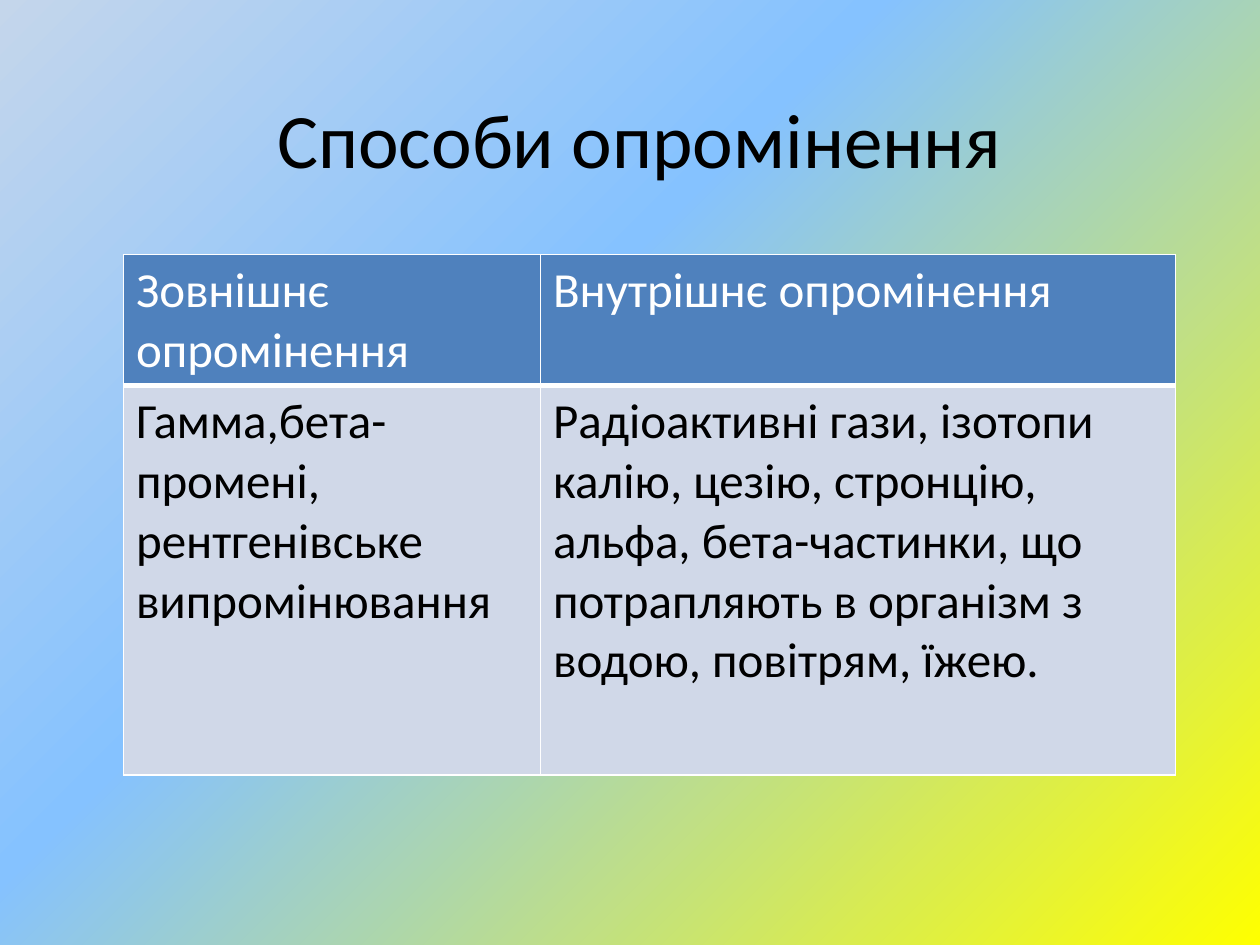
from copy import deepcopy

from lxml import etree
from pptx import Presentation
from pptx.dml.color import RGBColor
from pptx.enum.text import MSO_ANCHOR, PP_ALIGN
from pptx.oxml.ns import qn
from pptx.util import Inches, Pt

CENTER = PP_ALIGN.CENTER
MIDDLE = MSO_ANCHOR.MIDDLE

BLACK = RGBColor(0x00, 0x00, 0x00)
WHITE = RGBColor(0xFF, 0xFF, 0xFF)
HEADER_BLUE = RGBColor(0x4F, 0x81, 0xBD)
BODY_BLUE = RGBColor(0xD0, 0xD8, 0xE8)
BACKGROUND_STOPS = [
    (0, RGBColor(0xC4, 0xD6, 0xEB)),
    (0.4, RGBColor(0x85, 0xC2, 0xFF)),
    (1, RGBColor(0xFF, 0xFF, 0x00)),
]

FONT = "Calibri"
TITLE = "Способи опромінення"
EXPOSURE_ROWS = [
    ("Зовнішнє опромінення", "Внутрішнє опромінення"),
    (
        "Гамма,бета-промені, рентгенівське випромінювання",
        "Радіоактивні гази, ізотопи калію, цезію, стронцію, альфа, "
        "бета-частинки, що потрапляють в організм з водою, повітрям, їжею.",
    ),
]
ROW_STYLES = [
    (HEADER_BLUE, WHITE, {"L": 1, "R": 1, "T": 1, "B": 3}),
    (BODY_BLUE, BLACK, {"L": 1, "R": 1, "T": 3, "B": 1}),
]
COLUMN_WIDTHS = [3.31, 5.04]
ROW_HEIGHTS = [1.04, 3.09]


def add_run(paragraph, text, size, color):
    run = paragraph.add_run()
    run.text = text
    run.font.name = FONT
    run.font.size = Pt(size)
    run.font.bold = False
    run.font.color.rgb = color


def paint_background(slide):
    fill = slide.background.fill
    fill.gradient()
    fill.gradient_angle = 315
    stop_list = next(slide.element.iter(qn("a:gsLst")))
    stop_list.insert(1, deepcopy(stop_list[0]))
    for stop, (position, color) in zip(fill.gradient_stops, BACKGROUND_STOPS):
        stop.position = position
        stop.color.rgb = color


def set_borders(cell, widths):
    properties = cell._tc.get_or_add_tcPr()
    for index, (side, width) in enumerate(widths.items()):
        line = etree.Element(qn(f"a:ln{side}"), w=str(Pt(width)))
        solid = etree.SubElement(line, qn("a:solidFill"))
        etree.SubElement(solid, qn("a:srgbClr"), val=str(WHITE))
        properties.insert(index, line)


def add_title(slide):
    title = slide.shapes.add_textbox(
        Inches(0.83), Inches(0.29), Inches(8.5), Inches(1.61)
    )
    frame = title.text_frame
    frame.word_wrap = True
    frame.vertical_anchor = MIDDLE
    paragraph = frame.paragraphs[0]
    paragraph.alignment = CENTER
    add_run(paragraph, TITLE, 44, BLACK)


def add_exposure_table(slide):
    table = slide.shapes.add_table(
        len(EXPOSURE_ROWS), len(COLUMN_WIDTHS), Inches(0.98), Inches(2.02),
        Inches(sum(COLUMN_WIDTHS)), Inches(sum(ROW_HEIGHTS)),
    ).table
    for column, width in zip(table.columns, COLUMN_WIDTHS):
        column.width = Inches(width)
    for row, height, texts, style in zip(
        table.rows, ROW_HEIGHTS, EXPOSURE_ROWS, ROW_STYLES
    ):
        row.height = Inches(height)
        fill_color, text_color, borders = style
        for cell, text in zip(row.cells, texts):
            cell.fill.solid()
            cell.fill.fore_color.rgb = fill_color
            set_borders(cell, borders)
            add_run(cell.text_frame.paragraphs[0], text, 28, text_color)


def main():
    presentation = Presentation()
    presentation.slide_width = Inches(10)
    presentation.slide_height = Inches(7.5)
    slide = presentation.slides.add_slide(presentation.slide_layouts[6])
    paint_background(slide)
    add_title(slide)
    add_exposure_table(slide)
    presentation.save("out.pptx")


if __name__ == "__main__":
    main()
